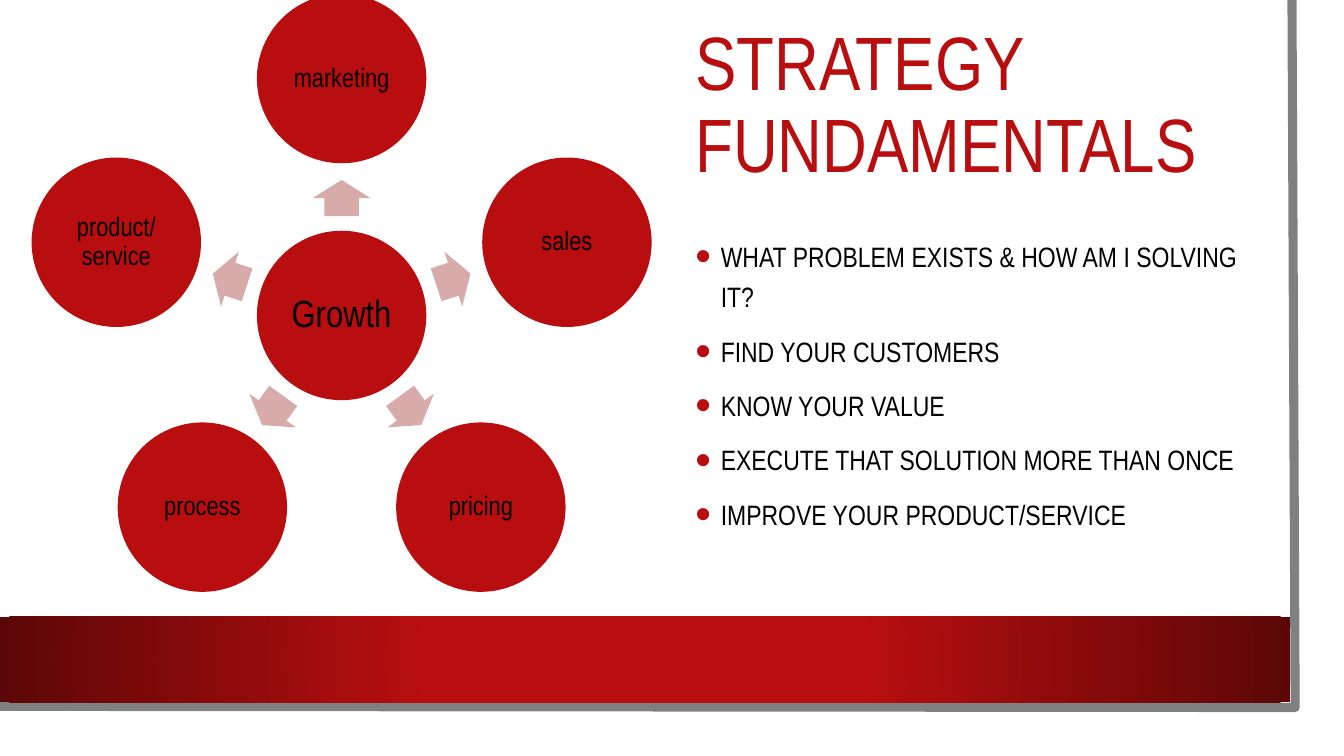
"""Build the strategy fundamentals slide with its radial growth diagram."""
import math

import pptx
import pptx.dml.color
import pptx.enum.shapes
import pptx.enum.text
import pptx.oxml
import pptx.oxml.ns
import pptx.util

Cm = pptx.util.Cm
Pt = pptx.util.Pt
RGBColor = pptx.dml.color.RGBColor
SHAPES = pptx.enum.shapes.MSO_SHAPE
ALIGN = pptx.enum.text.PP_ALIGN
ANCHOR = pptx.enum.text.MSO_ANCHOR

TITLE = "STRATEGY FUNDAMENTALS"
POINTS = [
    "WHAT PROBLEM EXISTS & HOW AM I SOLVING IT?",
    "FIND YOUR CUSTOMERS",
    "KNOW YOUR VALUE",
    "EXECUTE THAT SOLUTION MORE THAN ONCE",
    "IMPROVE YOUR PRODUCT/SERVICE",
]
HUB = "Growth"
DRIVERS = ["marketing", "sales", "pricing", "process", "product/ service"]

FONT = "Arial Narrow"
RED = RGBColor(0xB8, 0x0E, 0x0F)
DARK_RED = RGBColor(0x5C, 0x07, 0x07)
PINK = RGBColor(0xD8, 0xAB, 0xAB)
GRAY = RGBColor(0x80, 0x80, 0x80)
BLACK = RGBColor(0, 0, 0)

CENTER_X, CENTER_Y = 8.61, 7.95
ORBIT = 5.97
ARROW_ORBIT = 2.96
CIRCLE = 4.27
ARROW_LENGTH, ARROW_WIDTH = 0.91, 1.45
TEXT_LEFT, TEXT_WIDTH = 17.27, 14.6


def style(paragraph, size, color, spacing):
    paragraph.line_spacing = spacing
    paragraph.font.name = FONT
    paragraph.font.size = Pt(size)
    paragraph.font.color.rgb = color


def add_plain(page, kind, x, y, width, height, color):
    shape = page.shapes.add_shape(kind, Cm(x), Cm(y), Cm(width), Cm(height))
    shape.shadow.inherit = False
    shape.fill.solid()
    shape.fill.fore_color.rgb = color
    shape.line.fill.background()
    return shape


def add_circle(page, x, y, label, size, inset):
    circle = add_plain(page, SHAPES.OVAL, x - CIRCLE / 2, y - CIRCLE / 2,
                       CIRCLE, CIRCLE, RED)
    frame = circle.text_frame
    frame.word_wrap = True
    frame.vertical_anchor = ANCHOR.MIDDLE
    frame.margin_left = frame.margin_right = Cm(inset)
    frame.margin_top = frame.margin_bottom = Cm(inset)
    frame.text = label
    frame.paragraphs[0].alignment = ALIGN.CENTER
    style(frame.paragraphs[0], size, BLACK, 0.9)


def add_arrow(page, x, y, rotation):
    arrow = add_plain(page, SHAPES.RIGHT_ARROW, x - ARROW_LENGTH / 2,
                      y - ARROW_WIDTH / 2, ARROW_LENGTH, ARROW_WIDTH, PINK)
    arrow.adjustments[0] = 0.6
    arrow.adjustments[1] = 0.5
    arrow.rotation = rotation % 360


def add_frame(page):
    builder = page.shapes.build_freeform(Cm(32.56), Cm(0))
    builder.add_line_segments([(Cm(32.64), Cm(17.83)), (Cm(-0.08), Cm(17.8))],
                              close=False)
    edge = builder.convert_to_shape()
    edge.shadow.inherit = False
    edge.fill.background()
    edge.line.color.rgb = GRAY
    edge.line.width = Pt(6.5)


def add_band(page):
    band = add_plain(page, SHAPES.RECTANGLE, 0, 15.54, 32.51, 2.16, RED)
    gradient = pptx.oxml.parse_xml(
        f'<a:gradFill {pptx.oxml.ns.nsdecls("a")} rotWithShape="1"><a:gsLst>'
        f'<a:gs pos="34000"><a:srgbClr val="{RED}"/></a:gs>'
        f'<a:gs pos="100000"><a:srgbClr val="{DARK_RED}"/></a:gs></a:gsLst>'
        '<a:path path="circle"><a:fillToRect l="50000" t="50000" r="50000" '
        'b="50000"/></a:path></a:gradFill>')
    properties = band.element.spPr
    solid = properties.find(pptx.oxml.ns.qn("a:solidFill"))
    properties.replace(solid, gradient)


def add_diagram(page):
    add_circle(page, CENTER_X, CENTER_Y, HUB, 27, 0.1)
    for index, driver in enumerate(DRIVERS):
        degrees = index * 360 / len(DRIVERS) - 90
        across = math.cos(math.radians(degrees))
        down = math.sin(math.radians(degrees))
        add_arrow(page, CENTER_X + ARROW_ORBIT * across,
                  CENTER_Y + ARROW_ORBIT * down, degrees)
        add_circle(page, CENTER_X + ORBIT * across, CENTER_Y + ORBIT * down,
                   driver, 19, 0.08)


def place(holder, top, height):
    holder.left, holder.top = Cm(TEXT_LEFT), Cm(top)
    holder.width, holder.height = Cm(TEXT_WIDTH), Cm(height)
    frame = holder.text_frame
    frame.word_wrap = True
    frame.auto_size = pptx.enum.text.MSO_AUTO_SIZE.NONE
    frame.vertical_anchor = ANCHOR.TOP
    return frame


def add_bullet(paragraph):
    properties = paragraph._p.get_or_add_pPr()
    properties.set("marL", str(Cm(0.64)))
    properties.set("indent", str(Cm(-0.64)))
    for markup in (f'<a:buClr {{}}><a:srgbClr val="{RED}"/></a:buClr>',
                   '<a:buSzPct {} val="160000"/>',
                   '<a:buFont {} typeface="Arial"/>',
                   '<a:buChar {} char="•"/>'):
        properties.append(pptx.oxml.parse_xml(
            markup.format(pptx.oxml.ns.nsdecls("a"))))


def fill_text(page):
    heading = place(page.shapes.title, 0.51, 3.2)
    heading.text = TITLE
    heading.paragraphs[0].alignment = ALIGN.LEFT
    style(heading.paragraphs[0], 54, RED, 0.9)

    body = place(page.placeholders[1], 5.74, 9.19)
    body.text = "\n".join(POINTS)
    for index, paragraph in enumerate(body.paragraphs):
        add_bullet(paragraph)
        paragraph.space_before = Pt(10 if index else 0)
        style(paragraph, 20, BLACK, 1.2)


def main():
    deck = pptx.Presentation()
    deck.slide_width, deck.slide_height = Cm(33.87), Cm(19.05)
    page = deck.slides.add_slide(deck.slide_layouts[1])
    add_frame(page)
    add_band(page)
    add_diagram(page)
    fill_text(page)
    deck.save("out.pptx")


if __name__ == "__main__":
    main()
